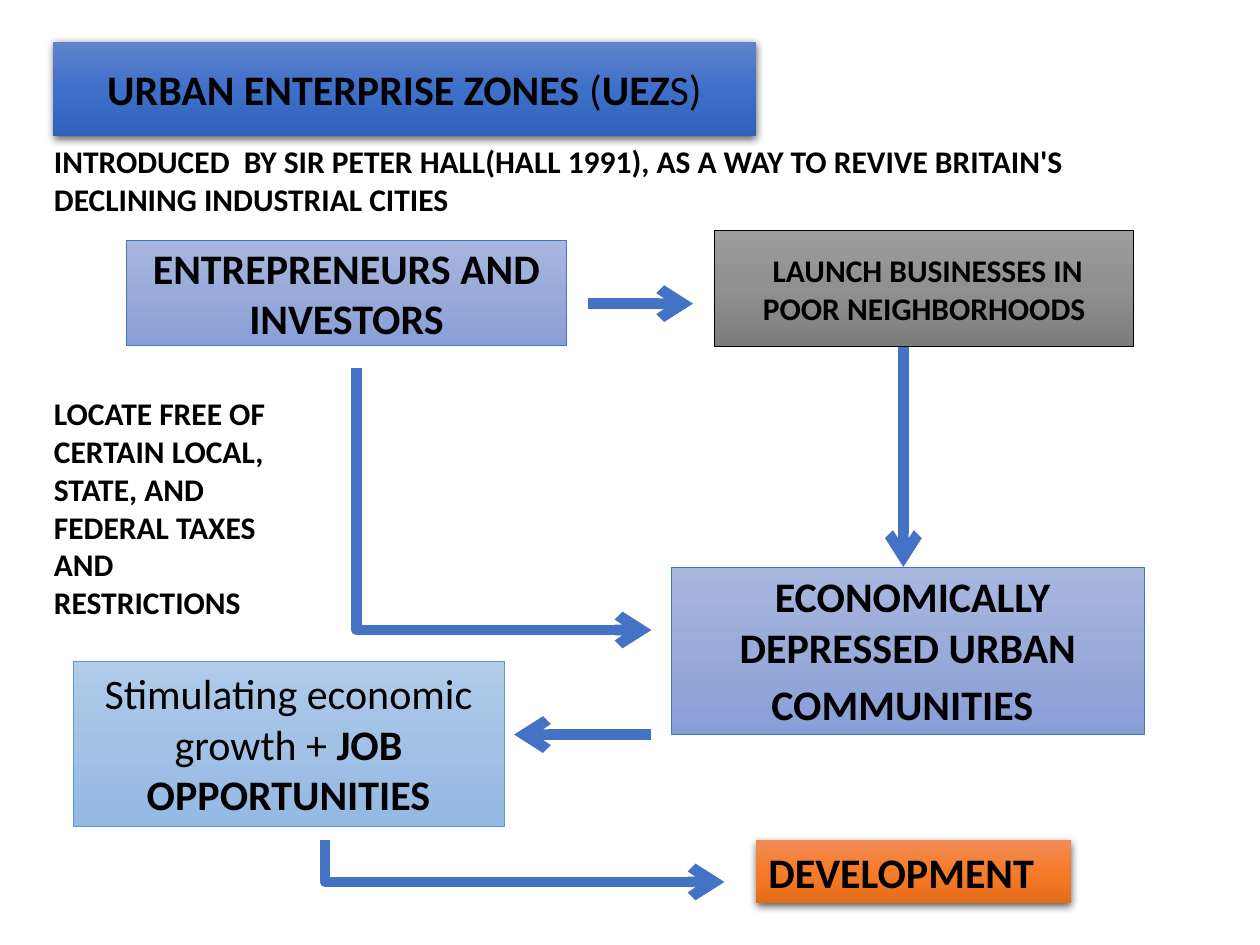
"""Build a flow chart slide on urban enterprise zones."""
from dataclasses import dataclass
from typing import Any

from pptx import Presentation
from pptx.dml.color import RGBColor as Rgb
from pptx.enum.shapes import MSO_CONNECTOR as Conn, MSO_SHAPE as Form
from pptx.enum.text import MSO_ANCHOR as Anchor, MSO_AUTO_SIZE as Auto, PP_ALIGN as Align
from pptx.oxml import parse_xml
from pptx.oxml.ns import nsdecls
from pptx.util import Inches, Pt


@dataclass(frozen=True)
class Theme:
    font: str = "Calibri"
    ink: str = "000000"
    edge: str = "4472C4"
    rim: str = "5B9BD5"
    blue: tuple = ("6183CB", "3E70CA", "3062BB")
    pale: tuple = ("A8B7DF", "9AABD9", "889ED7")
    gray: tuple = ("9D9D9D", "909090", "7C7C7C")
    fire: tuple = ("F18C57", "F67B28", "E56C19")
    sky: tuple = ("B1CBE9", "A3C1E5", "93B9E4")
    big: float = 24
    small: float = 18
    wide: float = 28
    thin: float = 0.5
    thick: float = 6


def node(body):
    head, rest = body.split(" ", 1) if " " in body else (body, "/>")
    return parse_xml(f"<a:{head} {nsdecls('a')} {rest}")


def apply(item, values):
    for name, value in values.items():
        setattr(item, name, value)


@dataclass
class Deck:
    style: Theme
    slide: Any

    def label(self, shape, runs, size, align=Align.CENTER, anchor=Anchor.MIDDLE, grow=False):
        frame = shape.text_frame
        fit = Auto.SHAPE_TO_FIT_TEXT if grow else Auto.NONE
        apply(frame, {"word_wrap": True, "vertical_anchor": anchor, "auto_size": fit})
        para = frame.paragraphs[0]
        para.alignment = align
        for text, bold, *own in runs:
            run = para.add_run()
            run.text = text
            points = own[0] if own else size
            apply(run.font, {"name": self.style.font, "size": Pt(points), "bold": bold})
            run.font.color.rgb = Rgb.from_string(self.style.ink)

    def box(self, area, fill, runs, size, edge=None, **form):
        shape = self.slide.shapes.add_shape(Form.RECTANGLE, *map(Inches, area))
        stops = "".join(
            f'<a:gs pos="{pos}"><a:srgbClr val="{tint}"/></a:gs>'
            for pos, tint in zip((0, 50000, 100000), fill))
        props = shape._element.spPr
        props.append(node(
            f'gradFill rotWithShape="1"><a:gsLst>{stops}</a:gsLst>'
            '<a:lin ang="5400000" scaled="0"/></a:gradFill>'))
        shape.shadow.inherit = False
        if edge:
            shape.line.color.rgb = Rgb.from_string(edge)
            shape.line.width = Pt(self.style.thin)
        else:
            shape.line.fill.background()
            props[-1].append(node(
                f'outerShdw blurRad="{Pt(4.5)}" dist="{Pt(1.5)}" dir="5400000" '
                f'algn="ctr" rotWithShape="0"><a:srgbClr val="{self.style.ink}">'
                '<a:alpha val="63000"/></a:srgbClr></a:outerShdw>'))
        self.label(shape, runs, size, **form)

    def note(self, area, text):
        shape = self.slide.shapes.add_textbox(*map(Inches, area))
        self.label(shape, [(text, True)], self.style.small, Align.LEFT, Anchor.TOP, True)

    def arrow(self, ends, bent=False):
        kind = Conn.ELBOW if bent else Conn.STRAIGHT
        link = self.slide.shapes.add_connector(kind, *map(Inches, ends))
        link.line.color.rgb = Rgb.from_string(self.style.edge)
        link.line.width = Pt(self.style.thick)
        link.line._ln.append(node('tailEnd type="arrow"/>'))
        props = link._element.spPr
        props.append(node("effectLst"))
        if bent:
            props.prstGeom.get_or_add_avLst().append(node('gd name="adj1" fmla="val 0"/>'))


def main():
    show = Presentation()
    apply(show, {"slide_width": Inches(10), "slide_height": Inches(7.5)})
    look = Theme()
    deck = Deck(look, show.slides.add_slide(show.slide_layouts[6]))

    deck.box((0.42, 0.33, 5.58, 0.75), look.blue,
             [("URBAN ENTERPRISE ZONES", True), (" (", False), ("UEZ", True), ("S)", False)],
             look.big)
    deck.box((1, 1.91, 3.5, 0.83), look.pale,
             [("ENTREPRENEURS AND INVESTORS", True)], look.big, look.edge)
    deck.arrow((4.67, 2.41, 5.5, 2.41))
    deck.box((5.67, 1.83, 3.33, 0.92), look.gray,
             [(" LAUNCH BUSINESSES IN POOR NEIGHBORHOODS", True)], look.small, look.ink)
    deck.arrow((7.17, 2.75, 7.17, 4.5))
    deck.box((6, 6.67, 2.5, 0.5), look.fire, [("DEVELOPMENT", True)], look.big,
             align=Align.LEFT, anchor=Anchor.TOP, grow=True)
    deck.arrow((2.83, 2.92, 5.17, 5), bent=True)
    deck.note((0.33, 3.08, 2.17, 1.92),
              "LOCATE FREE OF CERTAIN LOCAL, STATE, AND FEDERAL TAXES AND RESTRICTIONS")
    deck.box((5.33, 4.5, 3.75, 1.33), look.pale,
             [(" ECONOMICALLY DEPRESSED URBAN COMMUNITIES", True), (" ", False, look.wide)],
             look.big, look.edge)
    deck.arrow((5.17, 5.83, 4.08, 5.83))
    deck.box((0.58, 5.25, 3.42, 1.31), look.sky,
             [("Stimulating economic growth + ", False), ("JOB OPPORTUNITIES", True)],
             look.big, look.rim, anchor=Anchor.TOP, grow=True)
    deck.arrow((2.58, 6.67, 5.75, 7), bent=True)
    deck.note((0.33, 1.08, 9.17, 0.71),
              "INTRODUCED  BY SIR PETER HALL(HALL 1991), AS A WAY TO REVIVE BRITAIN'S "
              "DECLINING INDUSTRIAL CITIES")
    show.save("out.pptx")


if __name__ == "__main__":
    main()
